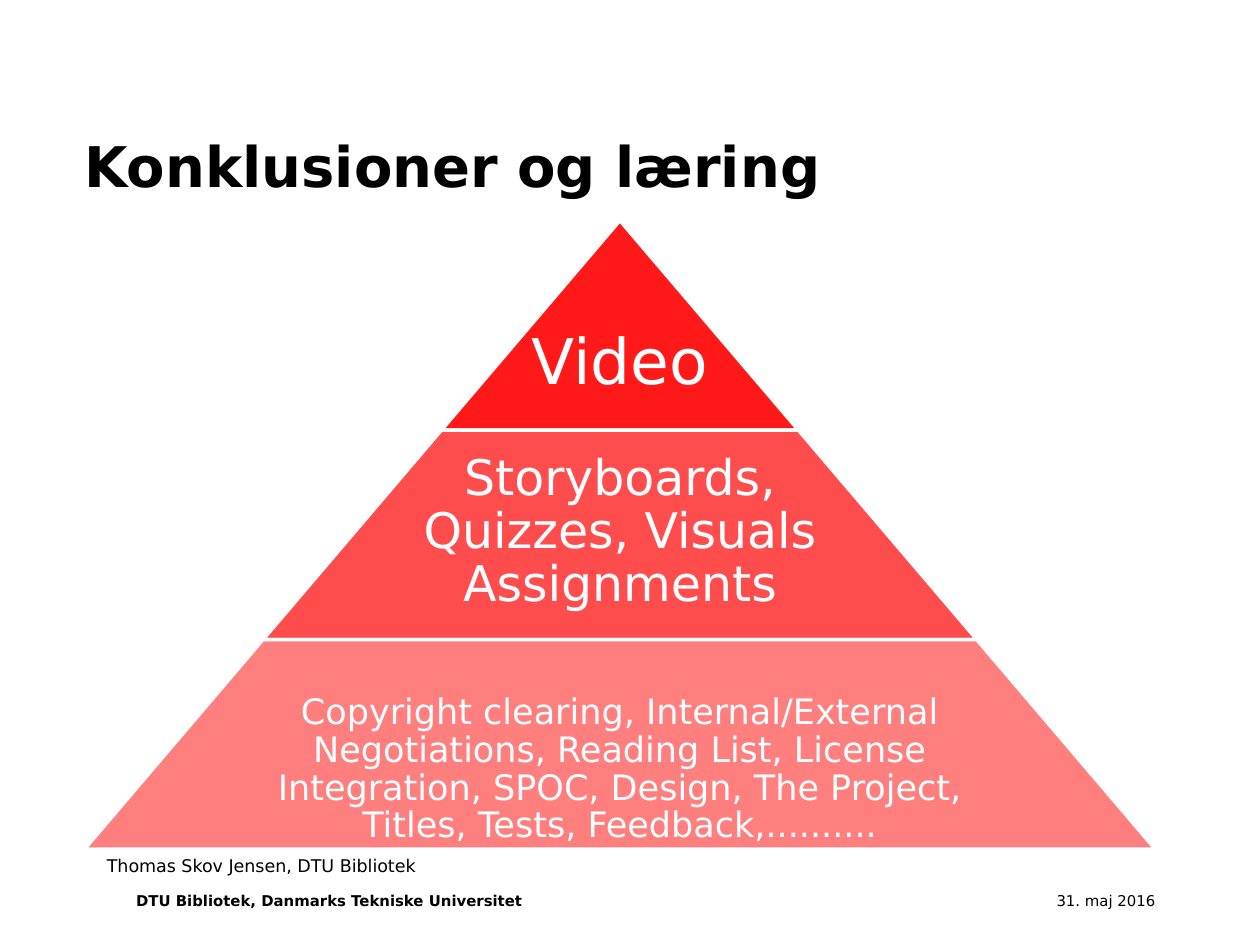
from lxml import etree
from pptx import Presentation
from pptx import util as u
from pptx.dml.color import RGBColor
from pptx.enum import shapes, text
from pptx.oxml import ns

RED = RGBColor(255, 0, 0)
WHITE = RGBColor(255, 255, 255)
BLACK = RGBColor(0, 0, 0)
FONT = "DejaVu Sans"
LEFT, MID, RIGHT = text.PP_ALIGN.LEFT, text.PP_ALIGN.CENTER, text.PP_ALIGN.RIGHT
TOP, LOW = text.MSO_ANCHOR.TOP, text.MSO_ANCHOR.BOTTOM
TIERS = [
    ("Video", 36, 90, 1, 0.25),
    ("Storyboards, Quizzes, Visuals Assignments", 28, 70, 0.65, 0.22),
    ("Copyright clearing, Internal/External Negotiations, Reading List, "
     "License Integration, SPOC, Design, The Project, Titles, Tests, "
     "Feedback,..........", 20, 50, 0.65, 0.03),
]


def label(slide, box, words, size, color=BLACK, bold=False, align=LEFT,
          anchor=TOP, pads=(0, 0, 0, 0), lead=1):
    """Place one paragraph of text in a box given in inches."""
    frame = slide.shapes.add_textbox(*map(u.Inches, box)).text_frame
    frame.word_wrap = True
    frame.vertical_anchor = anchor
    (frame.margin_left, frame.margin_top,
     frame.margin_right, frame.margin_bottom) = map(u.Inches, pads)
    para = frame.paragraphs[0]
    para.text = words
    para.alignment = align
    para.line_spacing = lead
    font = para.font
    font.name, font.size, font.bold = FONT, u.Pt(size), bold
    font.color.rgb = color


def tier(slide, box, slope, alpha):
    """Draw one see-through level of the pyramid."""
    kind = shapes.MSO_SHAPE.TRAPEZOID
    shape = slide.shapes.add_shape(kind, *map(u.Inches, box))
    shape.shadow.inherit = False
    shape.adjustments[0] = slope
    shape.fill.solid()
    shape.fill.fore_color.rgb = RED
    tint = shape.fill._xPr.find(".//" + ns.qn("a:srgbClr"))
    etree.SubElement(tint, ns.qn("a:alpha"), val=str(alpha * 1000))
    shape.line.color.rgb = WHITE
    shape.line.width = u.Pt(2)


def pyramid(slide, box):
    """Stack equal tiers that widen evenly down the box."""
    left, top, width, height = box
    count = len(TIERS)
    high = height / count
    for row, (words, size, alpha, share, drop) in enumerate(TIERS):
        wide = width * (row + 1) / count
        span = wide * share
        mid, y = left + width / 2, top + row * high
        tier(slide, (mid - wide / 2, y, wide, high), width / 2 / height, alpha)
        label(slide, (mid - span / 2, y, span, high), words, size, WHITE,
              align=MID, anchor=LOW, pads=(0.04, 0.04, 0.04, drop), lead=0.9)


def footer(slide, box):
    """Set the author line above the library name and the date."""
    left, top, width, height = box
    label(slide, (left + 0.08, top, width * 0.4, 0.27),
          "Thomas Skov Jensen, DTU Bibliotek", 10, pads=(0.1, 0.05, 0.1, 0.05))
    base, high = top + 0.34, height - 0.34
    label(slide, (left + 0.41, base, 4.63, high),
          "DTU Bibliotek, Danmarks Tekniske Universitet", 8.5, bold=True)
    label(slide, (left + width - 1.57, base, 1.57, high),
          "31. maj 2016", 8.5, align=RIGHT)


def main():
    """Build and save the slide."""
    deck = Presentation()
    deck.slide_width, deck.slide_height = u.Inches(10), u.Inches(7.5)
    slide = deck.slides.add_slide(deck.slide_layouts[6])
    left, width = 0.67, 8.5
    label(slide, (left, 0.33, width, 1.25), "Konklusioner og læring", 32,
          bold=True, anchor=LOW)
    pyramid(slide, (left, 1.75, width, 4.99))
    footer(slide, (left, 6.74, width, 0.67))
    deck.save("out.pptx")


if __name__ == "__main__":
    main()
